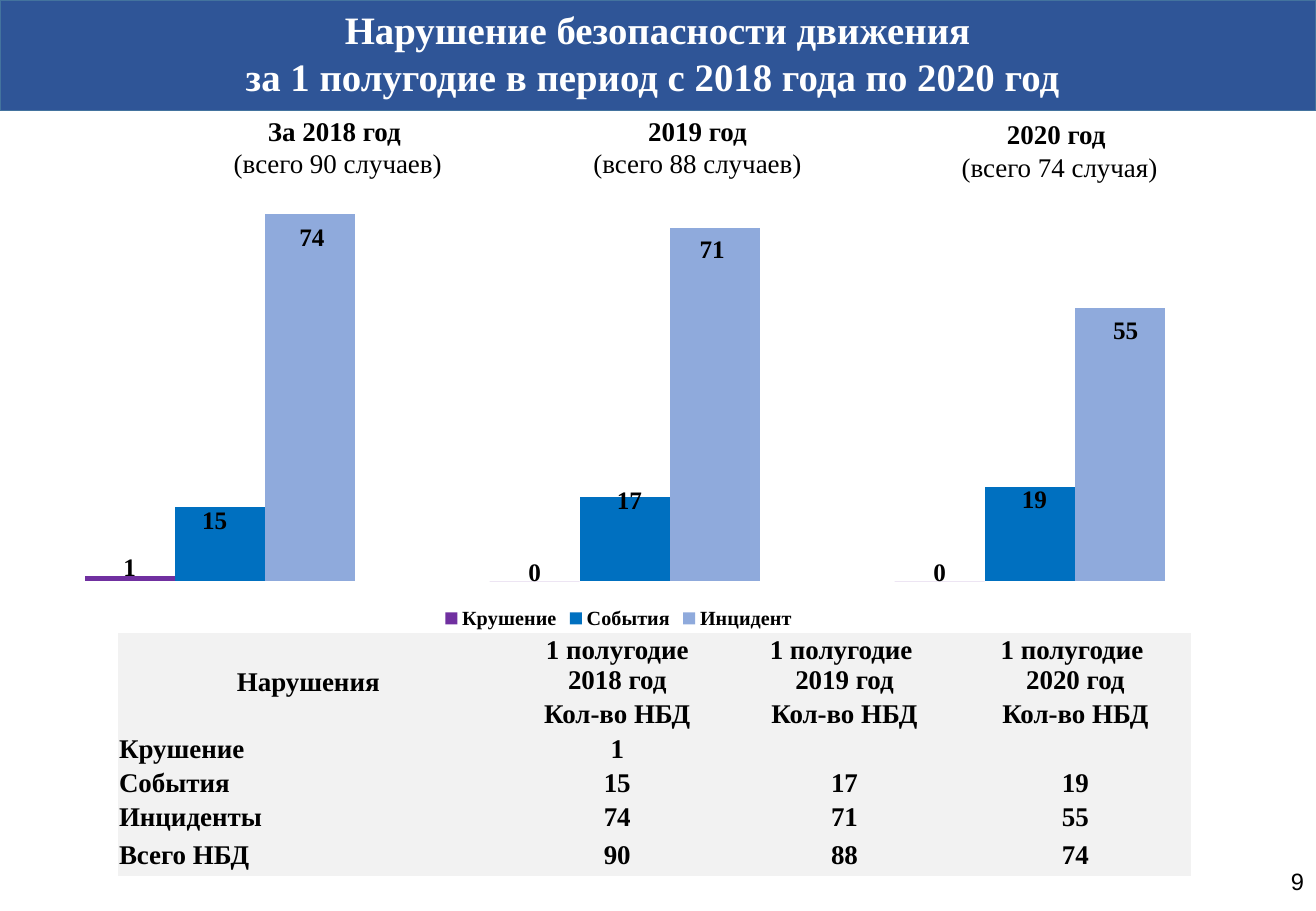
from dataclasses import dataclass

from pptx import Presentation
from pptx import util as u
from pptx.chart.data import CategoryChartData
from pptx.dml.color import RGBColor
from pptx.enum import chart as ch, shapes, text
from pptx.oxml import ns, xmlchemy


@dataclass(frozen=True)
class Theme:
    serif: str = "Times New Roman"
    sans: str = "Arial"
    black: str = "000000"
    white: str = "FFFFFF"
    banner: str = "2F5597"
    banner_line: str = "43739E"
    cell: str = "F2F2F2"
    title: float = 23
    body: float = 16
    number: float = 14
    label: float = 14.9
    legend: float = 11.9


@dataclass(frozen=True)
class Heading:
    left: float
    top: float
    width: float
    year: str
    total: str


@dataclass(frozen=True)
class Series:
    name: str
    color: str
    values: tuple[int, ...]
    label_shifts: tuple[tuple[float, float], ...]


T = Theme()
CENTER = text.PP_ALIGN.CENTER
MIDDLE = text.MSO_ANCHOR.MIDDLE

HEADINGS = (
    Heading(1.81, 0.89, 1.94, "За 2018 год ", "(всего 90 случаев)"),
    Heading(4.77, 0.89, 1.94, " 2019 год ", "(всего 88 случаев)"),
    Heading(7.8, 0.92, 1.84, "2020 год ", "(всего 74 случая)"),
)
SERIES = (
    Series("Крушение", "7030A0", (1, 0, 0), ((0, 0.02), (0, 0.02), (0, 0.02))),
    Series("События", "0070C0", (15, 17, 19), ((-0.004, 0.063), (0.004, 0.044), (0.004, 0.061))),
    Series("Инцидент", "8FAADC", (74, 71, 55), ((0.002, 0.082), (-0.002, 0.077), (0.005, 0.08))),
)
COLUMNS = (3.19, 1.84, 1.9, 1.9)
ROW_HEIGHTS = (0.53, 0.28, 0.28, 0.28, 0.28, 0.35)
ROWS = (
    ("Нарушения ", "1 полугодие\n2018 год", "1 полугодие \n2019 год", "1 полугодие \n2020 год"),
    ("", "Кол-во НБД", "Кол-во НБД", "Кол-во НБД"),
    ("Крушение", "1", "", ""),
    ("События", "15", "17", "19"),
    ("Инциденты", "74", "71", "55"),
    ("Всего НБД", "90", "88", "74"),
)
NO_STYLE = "{2D5ABB26-0587-4C30-8999-92F81FD0307C}"


def box(left: float, top: float, width: float, height: float) -> tuple[u.Length, ...]:
    return tuple(u.Inches(v) for v in (left, top, width, height))


def style_font(font, size: float, bold: bool = True, color: str = T.black, name: str = T.serif) -> None:
    font.name = name
    font.size = u.Pt(size)
    font.bold = bold
    font.color.rgb = RGBColor.from_string(color)


def style_paragraph(p, align, size: float, **font) -> None:
    p.alignment = align
    for r in p.runs:
        style_font(r.font, size, **font)


def add_title(s) -> None:
    banner = s.shapes.add_shape(shapes.MSO_SHAPE.RECTANGLE, *box(0, 0, 10.83, 0.91))
    banner.shadow.inherit = False
    banner.fill.solid()
    banner.fill.fore_color.rgb = RGBColor.from_string(T.banner)
    banner.line.color.rgb = RGBColor.from_string(T.banner_line)
    banner.line.width = u.Pt(1)
    title = s.shapes.title
    title.element.addprevious(banner.element)
    title.left, title.top, title.width, title.height = box(0, 0.13, 10.83, 0.6)
    tf = title.text_frame
    tf.text = "Нарушение безопасности движения\nза 1 полугодие в период с 2018 года по 2020 год "
    tf.vertical_anchor = MIDDLE
    tf.auto_size = text.MSO_AUTO_SIZE.NONE
    for p in tf.paragraphs:
        p.line_spacing = 1.0
        p.space_before = u.Pt(0)
        style_paragraph(p, CENTER, T.title, color=T.white)


def add_heading(s, heading: Heading) -> None:
    sp = s.shapes.add_textbox(*box(heading.left, heading.top, heading.width, 0.64))
    tf = sp.text_frame
    tf.word_wrap = False
    tf.auto_size = text.MSO_AUTO_SIZE.SHAPE_TO_FIT_TEXT
    tf.text = f"{heading.year}\n{heading.total}"
    year, total = tf.paragraphs
    style_paragraph(year, CENTER, T.body)
    style_paragraph(total, CENTER, T.body, bold=False)


def manual_layout(**settings):
    layout = xmlchemy.OxmlElement("c:layout")
    manual = xmlchemy.OxmlElement("c:manualLayout")
    layout.append(manual)
    for tag, value in settings.items():
        item = xmlchemy.OxmlElement(f"c:{tag}")
        item.set("val", str(value))
        manual.append(item)
    return layout


def add_chart(s) -> None:
    data = CategoryChartData()
    data.categories = ("1", "2", "3")
    for item in SERIES:
        data.add_series(item.name, item.values)
    frame = s.shapes.add_chart(ch.XL_CHART_TYPE.COLUMN_CLUSTERED, *box(0.04, 0.92, 10.1, 4.3), data)
    chart = frame.chart
    style_font(chart.font, T.label)
    chart.has_title = False
    chart.has_legend = True
    chart.legend.position = ch.XL_LEGEND_POSITION.BOTTOM
    chart.legend.include_in_layout = False
    style_font(chart.legend.font, T.legend)
    chart.category_axis.visible = False
    axis = chart.value_axis
    axis.visible = False
    axis.has_major_gridlines = False
    axis.minimum_scale, axis.maximum_scale = 0, 80
    plot = chart.plots[0]
    plot.gap_width, plot.overlap = 150, 0
    plot.vary_by_categories = False
    area = chart.element.find(".//" + ns.qn("c:plotArea"))
    for old in area.findall(ns.qn("c:layout")):
        area.remove(old)
    area.insert(0, manual_layout(layoutTarget="inner", xMode="edge", yMode="edge",
                                 x=0.01, y=0.138, w=0.99, h=0.761))
    for series, item in zip(plot.series, SERIES):
        series.format.fill.solid()
        series.format.fill.fore_color.rgb = RGBColor.from_string(item.color)
        series.data_labels.show_value = True
        style_font(series.data_labels.font, T.label)
        for i in range(len(item.values)):
            label = series.points[i].data_label
            label.position = ch.XL_LABEL_POSITION.OUTSIDE_END
            style_font(label.font, T.label)
    shifts = [shift for item in SERIES for shift in item.label_shifts]
    for label, (x, y) in zip(area.iter(ns.qn("c:dLbl")), shifts):
        label.find(ns.qn("c:idx")).addnext(manual_layout(x=x, y=y))


def fill_cell(cell, value: str, align) -> None:
    cell.fill.solid()
    cell.fill.fore_color.rgb = RGBColor.from_string(T.cell)
    cell.margin_left = cell.margin_right = cell.margin_top = u.Inches(0.01)
    cell.margin_bottom = 0
    cell.vertical_anchor = MIDDLE
    cell.text_frame.text = value
    for p in cell.text_frame.paragraphs:
        style_paragraph(p, align, T.body)
        if not value:
            end = xmlchemy.OxmlElement("a:endParaRPr")
            end.set("sz", str(T.body * 100))
            p._p.append(end)


def add_table(s) -> None:
    frame = s.shapes.add_table(len(ROWS), len(COLUMNS), *box(0.97, 5.21, sum(COLUMNS), sum(ROW_HEIGHTS)))
    table = frame.table
    table.first_row = table.horz_banding = False
    frame.element.find(".//" + ns.qn("a:tableStyleId")).text = NO_STYLE
    for column, width in zip(table.columns, COLUMNS):
        column.width = u.Inches(width)
    for i, (height, values) in enumerate(zip(ROW_HEIGHTS, ROWS)):
        table.rows[i].height = u.Inches(height)
        for j, value in enumerate(values):
            fill_cell(table.cell(i, j), value, text.PP_ALIGN.LEFT if j == 0 and i > 1 else CENTER)
    table.cell(0, 0).merge(table.cell(1, 0))


def add_page_number(s) -> None:
    tf = s.shapes.add_textbox(*box(10.14, 7.09, 0.69, 0.4)).text_frame
    tf.word_wrap = True
    tf.text = "9"
    style_paragraph(tf.paragraphs[0], text.PP_ALIGN.RIGHT, T.number, bold=False, name=T.sans)


def main() -> None:
    prs = Presentation()
    prs.slide_width, prs.slide_height = u.Inches(10.83), u.Inches(7.5)
    s = prs.slides.add_slide(prs.slide_layouts[5])
    add_title(s)
    add_table(s)
    add_chart(s)
    for heading in HEADINGS:
        add_heading(s, heading)
    add_page_number(s)
    prs.save("out.pptx")


if __name__ == "__main__":
    main()
